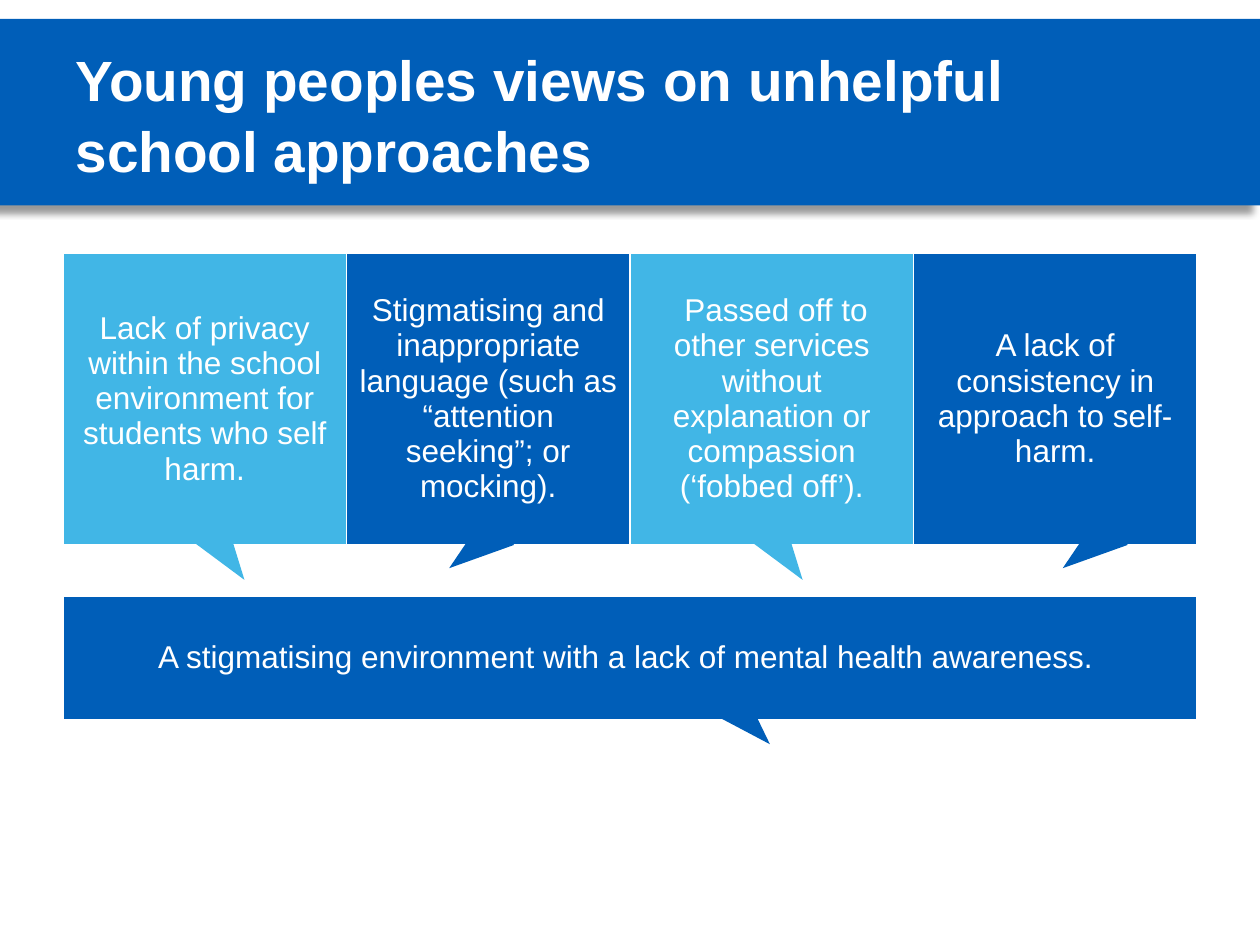
from lxml import etree
from pptx import Presentation
from pptx.dml.color import RGBColor
from pptx.enum import shapes, text
from pptx.oxml import parse_xml
from pptx.oxml.ns import nsdecls, qn
from pptx.util import Inches, Pt

COLORS = {"blue": "005EB8", "sky": "41B6E6", "white": "FFFFFF", "black": "000000"}
FONT = "Arial"
VIEWS = [
    "Lack of privacy within the school environment for students who self harm.",
    "Stigmatising and inappropriate language (such as “attention seeking”; or mocking).",
    " Passed off to other services without explanation or compassion (‘fobbed off’).",
    "A lack of consistency in approach to self-harm.",
]
SUMMARY = "A stigmatising environment with a lack of mental health awareness. "
ROWS = [2.31, 0.41, 0.98]
# left, top, rotation and colour of each speech tail
TAILS = [
    (1.62, 4.13, 144.7, "sky"),
    (3.6, 4.09, 232.2, "blue"),
    (6.05, 4.13, 144.7, "sky"),
    (8.47, 4.09, 232.2, "blue"),
    (5.76, 5.46, 136, "blue"),
]


def paint(fill, color):
    fill.solid()
    fill.fore_color.rgb = RGBColor.from_string(COLORS[color])


def write(frame, words, size, align, bold=False):
    frame.text = words
    para = frame.paragraphs[0]
    para.alignment = align
    font = para.runs[0].font
    font.name, font.size, font.bold = FONT, Pt(size), bold
    font.color.rgb = RGBColor.from_string(COLORS["white"])
    return para


def add_shape(slide, kind, box, color):
    shape = slide.shapes.add_shape(kind, *map(Inches, box))
    shape.shadow.inherit = False
    paint(shape.fill, color)
    shape.line.fill.background()
    return shape


def add_band(slide):
    band = add_shape(slide, shapes.MSO_SHAPE.RECTANGLE, (0, 0.15, 10, 1.48), "blue")
    effects = band._element.spPr.find(qn("a:effectLst"))
    effects.append(parse_xml(
        f'<a:outerShdw {nsdecls("a")} blurRad="{Pt(4)}" dist="{Pt(6)}" '
        'dir="8100000" algn="tr" rotWithShape="0">'
        f'<a:srgbClr val="{COLORS["black"]}"><a:alpha val="40000"/></a:srgbClr>'
        '</a:outerShdw>'))


def set_title(slide):
    title = slide.shapes.title
    title.left, title.top = Inches(0.5), Inches(0.27)
    title.width, title.height = Inches(9), Inches(1.25)
    frame = title.text_frame
    frame.word_wrap = True
    frame.auto_size = text.MSO_AUTO_SIZE.NONE
    frame.vertical_anchor = text.MSO_ANCHOR.MIDDLE
    para = write(frame, "Young peoples views on unhelpful school approaches",
                 32.4, text.PP_ALIGN.LEFT, True)
    para.line_spacing = 1.04
    # Bring the title in front of the band
    slide.shapes._spTree.append(title._element)


def add_borders(cell):
    props = cell._tc.get_or_add_tcPr()
    for spot, side in enumerate(("lnL", "lnR", "lnT", "lnB")):
        line = etree.Element(qn(f"a:{side}"), w=str(Pt(1)))
        fill = etree.SubElement(line, qn("a:solidFill"))
        etree.SubElement(fill, qn("a:srgbClr"), val=COLORS["white"])
        props.insert(spot, line)


def fill_cell(cell, words, color):
    paint(cell.fill, color)
    cell.vertical_anchor = text.MSO_ANCHOR.MIDDLE
    write(cell.text_frame, words, 18, text.PP_ALIGN.CENTER)


def add_views(slide):
    frame = slide.shapes.add_table(
        len(ROWS), len(VIEWS), Inches(0.5), Inches(2.01), Inches(9), Inches(sum(ROWS)))
    table = frame.table
    table.first_row = table.horz_banding = False
    for row, height in zip(table.rows, ROWS):
        row.height = Inches(height)
    for cell in table.iter_cells():
        paint(cell.fill, "white")
        add_borders(cell)
    for col, words in enumerate(VIEWS):
        fill_cell(table.cell(0, col), words, ("sky", "blue")[col % 2])
    for row in (1, 2):
        table.cell(row, 0).merge(table.cell(row, len(VIEWS) - 1))
    fill_cell(table.cell(2, 0), SUMMARY, "blue")


def add_tail(slide, left, top, angle, color):
    tail = add_shape(slide, shapes.MSO_SHAPE.ISOSCELES_TRIANGLE,
                     (left, top, 0.34, 0.52), color)
    tail.rotation = angle


def main():
    deck = Presentation()
    deck.slide_width, deck.slide_height = Inches(10), Inches(7.5)
    slide = deck.slides.add_slide(deck.slide_layouts[5])
    add_band(slide)
    add_views(slide)
    set_title(slide)
    for tail in TAILS:
        add_tail(slide, *tail)
    deck.save("out.pptx")


if __name__ == "__main__":
    main()
